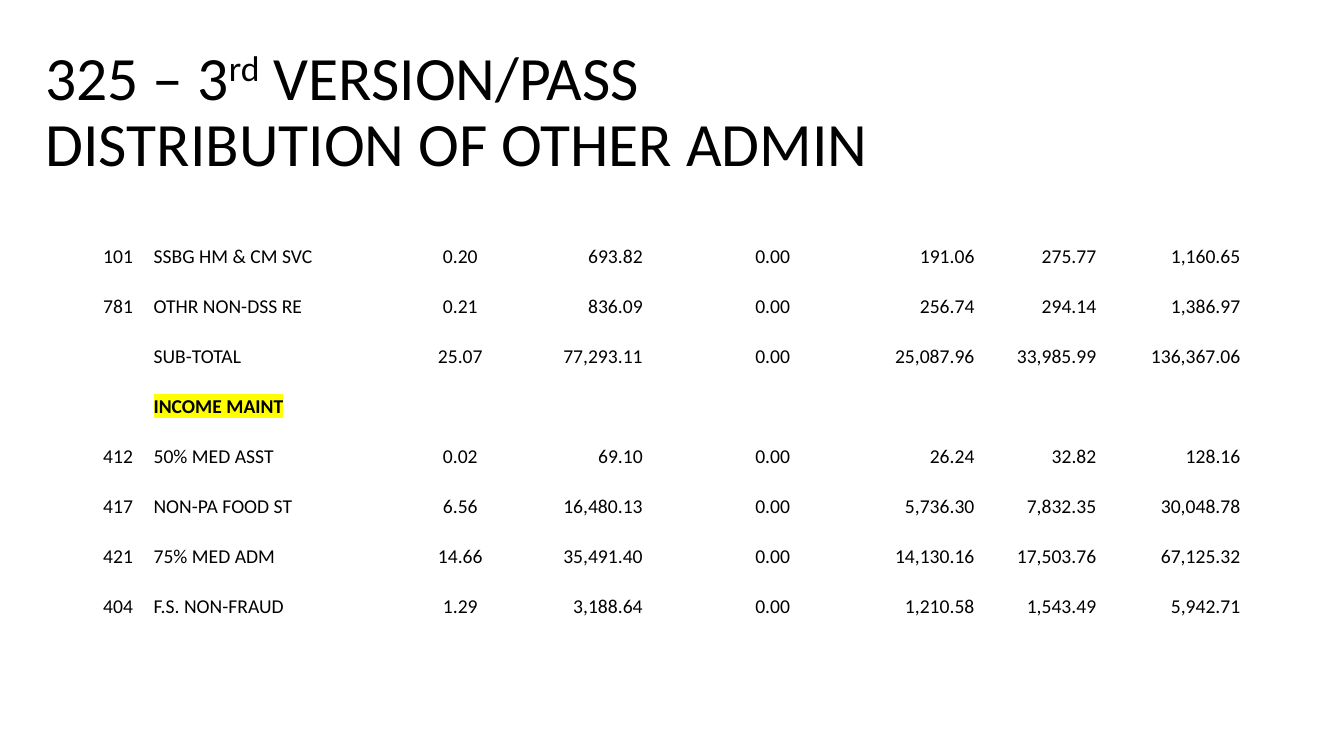
from lxml.etree import SubElement
from pptx import Presentation
from pptx.dml.color import RGBColor
from pptx.enum.text import MSO_ANCHOR as Anchor, MSO_AUTO_SIZE as AutoSize, PP_ALIGN as Align
from pptx.oxml.ns import qn
from pptx.util import Cm, Pt

BLACK = RGBColor(0x00, 0x00, 0x00)
YELLOW = RGBColor(0xFF, 0xFF, 0x00)
FONT = "Calibri"
TITLE_SIZE = 44
TABLE_SIZE = 14

COLUMN_WIDTHS = [1.75, 6.25, 3, 3.12, 3.71, 4.65, 3.58, 3.12]
COLUMN_ALIGNMENTS = [Align.CENTER, Align.LEFT, Align.CENTER] + [Align.RIGHT] * 5
INDENTED_COLUMN = 6
ROW_COUNT = 21
ROW_HEIGHT = 0.63
FIRST_ENTRY_ROW = 4
ENTRY_STEP = 2
HEADING = "INCOME MAINT"

ENTRIES = [
    ["101", "SSBG HM & CM SVC", "0.20", "693.82", "0.00", "191.06", "275.77", "1,160.65"],
    ["781", "OTHR NON-DSS RE", "0.21", "836.09", "0.00", "256.74", "294.14", "1,386.97"],
    ["", "SUB-TOTAL", "25.07", "77,293.11", "0.00", "25,087.96", "33,985.99", "136,367.06"],
    ["", HEADING, "", "", "", "", "", ""],
    ["412", "50% MED ASST", "0.02", "69.10", "0.00", "26.24", "32.82", "128.16"],
    ["417", "NON-PA FOOD ST", "6.56", "16,480.13", "0.00", "5,736.30", "7,832.35", "30,048.78"],
    ["421", "75% MED ADM", "14.66", "35,491.40", "0.00", "14,130.16", "17,503.76", "67,125.32"],
    ["404", "F.S. NON-FRAUD", "1.29", "3,188.64", "0.00", "1,210.58", "1,543.49", "5,942.71"],
]


def add_run(paragraph, text, size, bold=False):
    run = paragraph.add_run()
    run.text = text
    run.font.size = Pt(size)
    run.font.bold = bold
    run.font.color.rgb = BLACK
    run.font.name = FONT
    return run


def raise_run(run):
    run._r.get_or_add_rPr().set("baseline", "30000")


def highlight_run(run, color):
    properties = run._r.get_or_add_rPr()
    highlight = SubElement(properties, qn("a:highlight"))
    SubElement(highlight, qn("a:srgbClr")).set("val", str(color))
    properties.find(qn("a:solidFill")).addnext(highlight)


def fill_title(title):
    title.left, title.top, title.width, title.height = Cm(0.89), Cm(1.02), Cm(32.05), Cm(3.68)
    frame = title.text_frame
    frame.word_wrap = True
    frame.auto_size = AutoSize.NONE
    frame.vertical_anchor = Anchor.MIDDLE
    paragraph = frame.paragraphs[0]
    paragraph.alignment = Align.LEFT
    paragraph.line_spacing = 0.9
    add_run(paragraph, "325 – 3", TITLE_SIZE)
    raise_run(add_run(paragraph, "rd", TITLE_SIZE))
    add_run(paragraph, " VERSION/PASS", TITLE_SIZE)
    paragraph.add_line_break()
    add_run(paragraph, "DISTRIBUTION OF OTHER ADMIN", TITLE_SIZE)


def clear_borders(cell):
    properties = cell._tc.get_or_add_tcPr()
    for side in ("a:lnL", "a:lnR", "a:lnT", "a:lnB"):
        border = SubElement(properties, qn(side))
        border.set("w", "0")
        SubElement(border, qn("a:noFill"))


def format_cell(cell, column):
    clear_borders(cell)
    cell.fill.background()
    cell.vertical_anchor = Anchor.BOTTOM
    cell.margin_left = cell.margin_top = Cm(0.02)
    cell.margin_right = Cm(0.53 if column == INDENTED_COLUMN else 0.02)
    cell.margin_bottom = Cm(0)
    cell.text_frame.paragraphs[0].alignment = COLUMN_ALIGNMENTS[column]


def write_cell(cell, text):
    paragraph = cell.text_frame.paragraphs[0]
    if not text:
        end = SubElement(paragraph._p, qn("a:endParaRPr"))
        end.set("sz", str(TABLE_SIZE * 100))
        SubElement(end, qn("a:latin")).set("typeface", FONT)
        return
    run = add_run(paragraph, text, TABLE_SIZE, bold=text == HEADING)
    if text == HEADING:
        highlight_run(run, YELLOW)


def add_distribution_table(slide):
    shape = slide.shapes.add_table(
        ROW_COUNT, len(COLUMN_WIDTHS), Cm(2.1), Cm(3.61),
        Cm(sum(COLUMN_WIDTHS)), Cm(ROW_COUNT * ROW_HEIGHT))
    table = shape.table
    table.first_row = table.horz_banding = False
    for column, width in zip(table.columns, COLUMN_WIDTHS):
        column.width = Cm(width)
    entry_rows = {FIRST_ENTRY_ROW + ENTRY_STEP * i: entry for i, entry in enumerate(ENTRIES)}
    blank_row = [""] * len(COLUMN_WIDTHS)
    for row_index, row in enumerate(table.rows):
        row.height = Cm(ROW_HEIGHT)
        texts = entry_rows.get(row_index, blank_row)
        for column, (cell, text) in enumerate(zip(row.cells, texts)):
            format_cell(cell, column)
            write_cell(cell, text)


def main():
    presentation = Presentation()
    presentation.slide_width, presentation.slide_height = Cm(33.87), Cm(19.05)
    slide = presentation.slides.add_slide(presentation.slide_layouts.get_by_name("Title Only"))
    fill_title(slide.shapes.title)
    add_distribution_table(slide)
    presentation.save("out.pptx")


if __name__ == "__main__":
    main()
